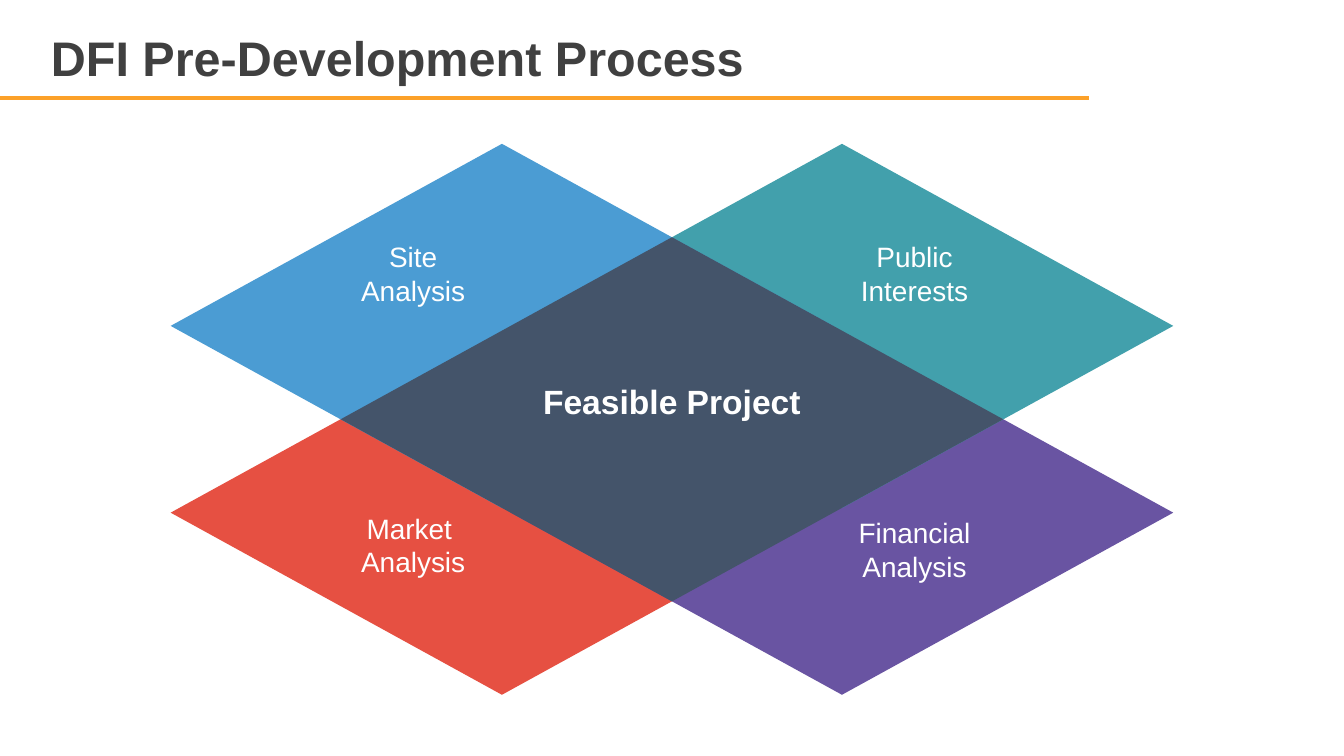
from lxml import etree
from pptx import Presentation
from pptx.dml.color import RGBColor
from pptx.enum.shapes import MSO_CONNECTOR, MSO_SHAPE
from pptx.enum.text import MSO_ANCHOR, PP_ALIGN
from pptx.oxml.ns import qn
from pptx.util import Inches, Pt

DIAMOND = MSO_SHAPE.DIAMOND
STRAIGHT = MSO_CONNECTOR.STRAIGHT
MIDDLE = MSO_ANCHOR.MIDDLE
LEFT, CENTER = PP_ALIGN.LEFT, PP_ALIGN.CENTER

SLIDE_W = 10
SLIDE_H = SLIDE_W * 9 / 16

FONT = "Arial"
WHITE = "FFFFFF"
TITLE = "DFI Pre-Development Process"
TITLE_COLOR = "404040"
RULE_COLOR = "FCA129"
CORE = "Feasible Project"
CORE_COLOR = "44546A"

# label lines, fill, column, row, top of the label; from back to front
FACTORS = [
    (["Market ", "Analysis"], "E65042", 0, 1, 3.75),
    (["Financial", "Analysis"], "6954A2", 1, 1, 3.78),
    (["Public", "Interests"], "42A0AC", 1, 0, 1.73),
    (["Site", "Analysis"], "4B9CD3", 0, 0, 1.73),
]

DIAMOND_W, DIAMOND_H = 4.93, 2.71
GRID_LEFT, GRID_TOP = 1.27, 1.07
STEP_X, STEP_Y = 2.53, 1.39
LABEL_LEFT, LABEL_STEP = 2.21, 3.73
LABEL_W, LABEL_H = 1.73, 0.61


def rgb(color):
    return RGBColor.from_string(color)


def add_diamond(column, row, color):
    """Draw a diamond; half steps place it between the grid cells."""
    diamond = slide.shapes.add_shape(
        DIAMOND,
        Inches(GRID_LEFT + column * STEP_X), Inches(GRID_TOP + row * STEP_Y),
        Inches(DIAMOND_W), Inches(DIAMOND_H))
    diamond.shadow.inherit = False
    diamond.fill.solid()
    diamond.fill.fore_color.rgb = rgb(color)
    diamond.line.fill.background()


def add_text(lines, left, top, width, height, size,
             color=WHITE, bold=False, align=CENTER):
    box = slide.shapes.add_textbox(
        Inches(left), Inches(top), Inches(width), Inches(height))
    frame = box.text_frame
    frame.word_wrap = True
    frame.vertical_anchor = MIDDLE
    for index, line in enumerate(lines):
        paragraph = frame.add_paragraph() if index else frame.paragraphs[0]
        paragraph.alignment = align
        run = paragraph.add_run()
        run.text = line
        run.font.name = FONT
        run.font.size = Pt(size)
        run.font.bold = bold
        run.font.color.rgb = rgb(color)


prs = Presentation()
prs.slide_width, prs.slide_height = Inches(SLIDE_W), Inches(SLIDE_H)
slide = prs.slides.add_slide(prs.slide_layouts[6])

rule = slide.shapes.add_connector(
    STRAIGHT, 0, Inches(0.73), Inches(8.1), Inches(0.73))
rule.line.color.rgb = rgb(RULE_COLOR)
rule.line.width = Pt(2)
etree.SubElement(rule._element.spPr, qn("a:effectLst"))

for _, color, column, row, _ in FACTORS:
    add_diamond(column, row, color)
add_diamond(0.5, 0.5, CORE_COLOR)

add_text([TITLE], 0.28, 0.14, 7.82, 0.57, 26, TITLE_COLOR, True, LEFT)
add_text([CORE], 0.28, 1.04, 9.44, 3.89, 18, bold=True)
for lines, _, column, _, top in FACTORS:
    add_text(lines, LABEL_LEFT + column * LABEL_STEP, top, LABEL_W, LABEL_H, 15)

prs.save("out.pptx")
